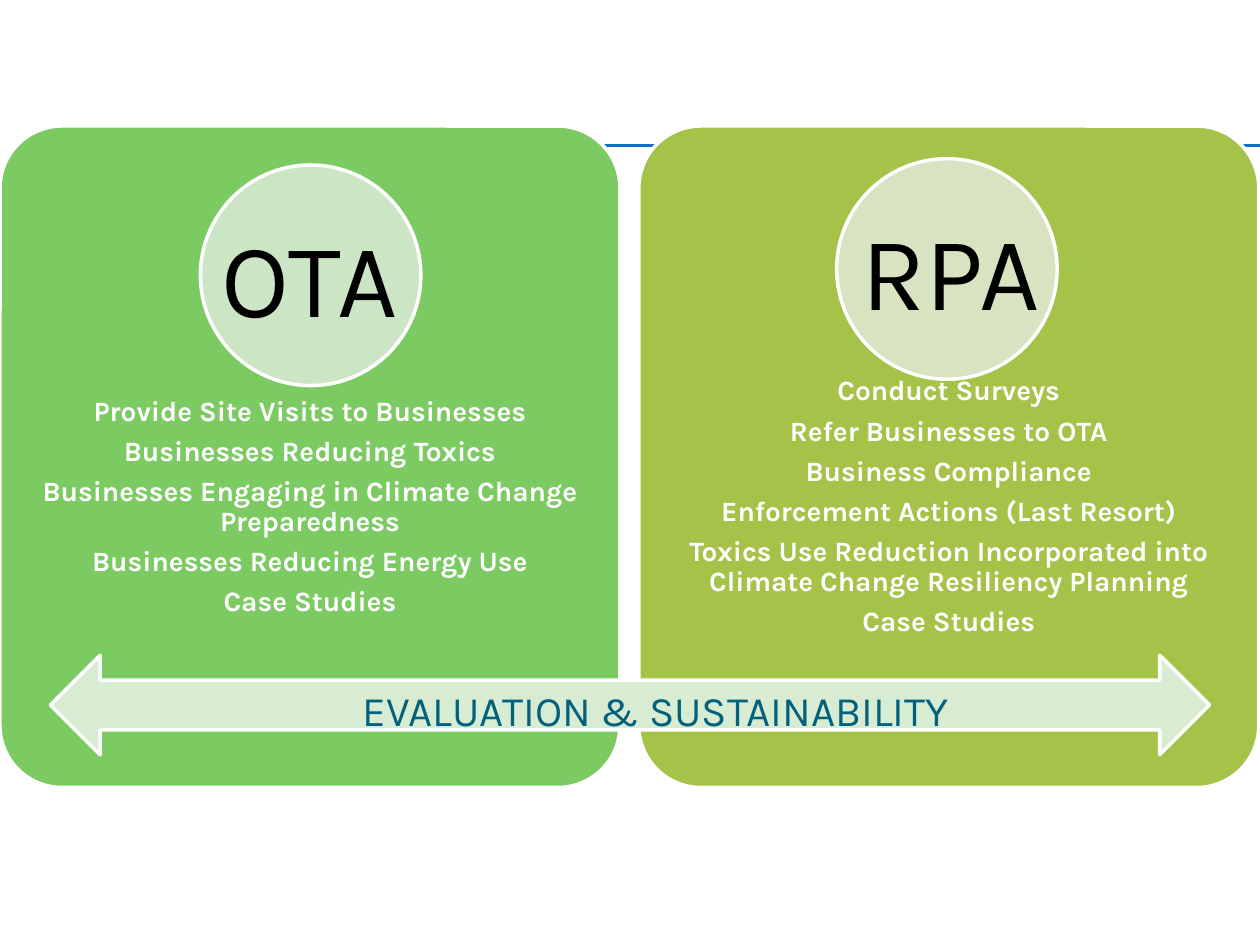
import dataclasses

import lxml.etree
import pptx
import pptx.dml.color
import pptx.enum.shapes
import pptx.enum.text
import pptx.oxml.ns
import pptx.util

Inches = pptx.util.Inches
Pt = pptx.util.Pt
Shapes = pptx.enum.shapes.MSO_SHAPE


@dataclasses.dataclass(frozen=True)
class Theme:
    font: str = "Karla"
    white: str = "FFFFFF"
    black: str = "000000"
    teal: str = "04617B"
    rule: str = "0F6FC6"
    green: str = "7CCA62"
    pale_green: str = "CCE6C5"
    olive: str = "A5C249"
    pale_olive: str = "D8E3C1"
    arrow: str = "D7ECD3"
    body_size: float = 16
    title_size: float = 24
    acronym_size: float = 60
    outline: float = 2
    rule_width: float = 0.75


class SlideBuilder:
    def __init__(self, slide, theme):
        self.slide = slide
        self.theme = theme

    def color(self, value):
        return pptx.dml.color.RGBColor.from_string(value)

    def rule(self, left, right, top):
        connector = self.slide.shapes.add_connector(
            pptx.enum.shapes.MSO_CONNECTOR.STRAIGHT,
            Inches(left), Inches(top), Inches(right), Inches(top))
        connector.line.color.rgb = self.color(self.theme.rule)
        connector.line.width = Pt(self.theme.rule_width)
        lxml.etree.SubElement(connector.element.spPr, pptx.oxml.ns.qn("a:effectLst"))

    def shape(self, kind, left, top, width, height, fill):
        shape = self.slide.shapes.add_shape(
            kind, Inches(left), Inches(top), Inches(width), Inches(height))
        shape.shadow.inherit = False
        shape.fill.solid()
        shape.fill.fore_color.rgb = self.color(fill)
        shape.line.color.rgb = self.color(self.theme.white)
        shape.line.width = Pt(self.theme.outline)
        return shape

    def text(self, left, top, width, height, lines, size, color, bold=False):
        box = self.slide.shapes.add_textbox(
            Inches(left), Inches(top), Inches(width), Inches(height))
        frame = box.text_frame
        frame.word_wrap = True
        frame.vertical_anchor = pptx.enum.text.MSO_ANCHOR.MIDDLE
        frame.text = "\n".join(lines)
        for paragraph in frame.paragraphs:
            paragraph.alignment = pptx.enum.text.PP_ALIGN.CENTER
            paragraph.font.name = self.theme.font
            paragraph.font.size = Pt(size)
            paragraph.font.bold = bold
            paragraph.font.color.rgb = self.color(color)
        return frame

    def card(self, left, fill, circle_left, circle_top, circle_fill, activities):
        top, width, height, circle_size = 1, 4.92, 5.25, 1.75
        panel = self.shape(Shapes.ROUNDED_RECTANGLE, left, top, width, height, fill)
        panel.adjustments[0] = 0.1
        self.shape(Shapes.OVAL, circle_left, circle_top, circle_size, circle_size, circle_fill)
        frame = self.text(left, 3.1, width, 2.1, activities,
                          self.theme.body_size, self.theme.white, bold=True)
        frame.margin_left = frame.margin_right = frame.margin_top = Inches(0.12)
        frame.margin_bottom = Inches(0.37)
        for paragraph in frame.paragraphs:
            paragraph.line_spacing = 0.9
            paragraph.space_after = Pt(0.35 * self.theme.body_size)

    def acronym(self, left, top, label):
        frame = self.text(left, top, 1.75, 1.11, [label],
                          self.theme.acronym_size, self.theme.black)
        frame.vertical_anchor = pptx.enum.text.MSO_ANCHOR.TOP


def main():
    theme = Theme()
    presentation = pptx.Presentation()
    presentation.slide_width = Inches(10)
    presentation.slide_height = Inches(7.5)
    slide = presentation.slides.add_slide(presentation.slide_layouts[6])
    builder = SlideBuilder(slide, theme)

    for top in (1.15, 1.16):
        builder.rule(0.56, 10, top)

    builder.card(0, theme.green, 1.59, 1.31, theme.pale_green, [
        "Provide Site Visits to Businesses",
        "Businesses Reducing Toxics",
        "Businesses Engaging in Climate Change Preparedness",
        "Businesses Reducing Energy Use",
        "Case Studies",
    ])
    builder.card(5.07, theme.olive, 6.64, 1.26, theme.pale_olive, [
        "Conduct Surveys",
        "Refer Businesses to OTA",
        "Business Compliance",
        "Enforcement Actions (Last Resort)",
        "Toxics Use Reduction Incorporated into Climate Change Resiliency Planning",
        "Case Studies",
    ])

    builder.shape(Shapes.LEFT_RIGHT_ARROW, 0.4, 5.2, 9.2, 0.79, theme.arrow)
    builder.text(1.08, 5.17, 8.25, 0.92, ["EVALUATION & SUSTAINABILITY"],
                 theme.title_size, theme.teal)
    builder.acronym(1.58, 1.64, "OTA")
    builder.acronym(6.67, 1.58, "RPA")

    presentation.save("out.pptx")


if __name__ == "__main__":
    main()
